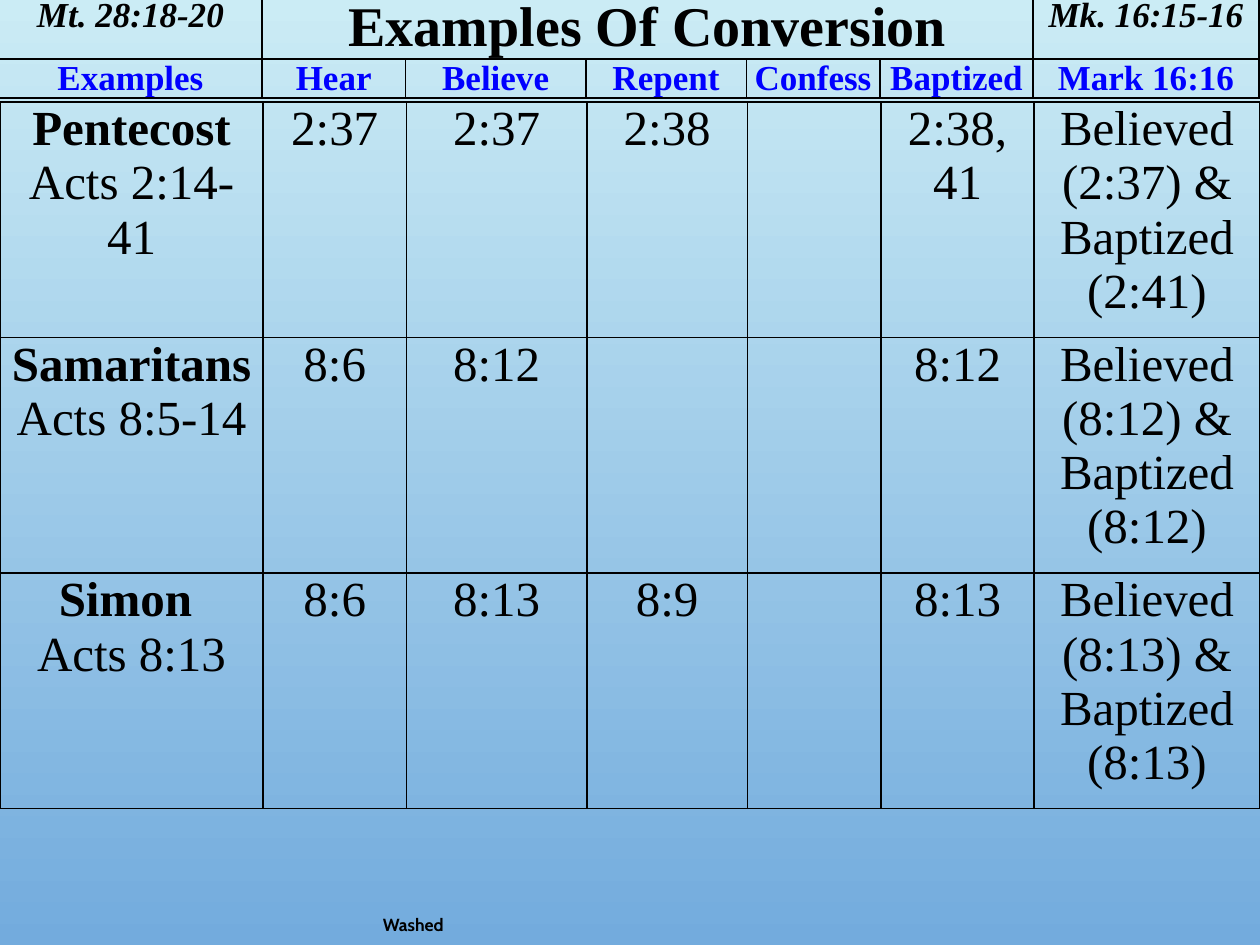
from dataclasses import dataclass

from lxml.etree import SubElement
from pptx import Presentation
from pptx.dml.color import RGBColor
from pptx.enum.text import MSO_ANCHOR, PP_ALIGN
from pptx.oxml.ns import qn
from pptx.util import Pt


@dataclass(frozen=True)
class Theme:
    sky_top: str = "CBECF5"
    sky_bottom: str = "73ABDD"
    ink: str = "000000"
    heading: str = "0000FF"
    serif: str = "Times New Roman"
    sans: str = "Cabin"
    title_size: int = 32
    body_size: int = 28
    label_size: int = 20
    footer_size: int = 10
    border: int = 1


THEME = Theme()
COLUMN_WIDTHS = [150.3, 82, 103.1, 91.7, 76.3, 87.7, 128.9]
HEADINGS = ["Examples", "Hear", "Believe", "Repent", "Confess", "Baptized", "Mark 16:16"]
# Name, passage, then one entry for each heading after the first
CONVERSIONS = [
    ("Pentecost", "Acts 2:14-41", "2:37", "2:37", "2:38", "", "2:38, 41",
     "Believed (2:37) & Baptized (2:41)"),
    ("Samaritans", "Acts 8:5-14", "8:6", "8:12", "", "", "8:12",
     "Believed (8:12) & Baptized (8:12)"),
    ("Simon ", "Acts 8:13", "8:6", "8:13", "8:9", "", "8:13",
     "Believed (8:13) & Baptized (8:13)"),
]
FIRST_TOP, ROW_HEIGHT, ROW_STEP = 58.3, 123.9, 134.6


def write(para, text, size=THEME.body_size, font=THEME.serif, color=THEME.ink,
          bold=False, italic=False, align=PP_ALIGN.CENTER):
    para.alignment = align
    span = para.add_run()
    span.text = text
    span.font.size = Pt(size)
    span.font.name = font
    span.font.bold = bold
    span.font.italic = italic
    span.font.color.rgb = RGBColor.from_string(color)


def format_cell(cell, side_margin=3.6):
    cell.margin_left = cell.margin_right = Pt(side_margin)
    cell.margin_top = cell.margin_bottom = 0
    properties = cell._tc.get_or_add_tcPr()
    for side in ("lnL", "lnR", "lnT", "lnB"):
        line = SubElement(properties, qn(f"a:{side}"), w=str(Pt(THEME.border)))
        fill = SubElement(line, qn("a:solidFill"))
        SubElement(fill, qn("a:srgbClr"), val=THEME.ink)
    cell.fill.background()


def add_grid(page, left, top, row_heights):
    frame = page.shapes.add_table(
        len(row_heights), len(COLUMN_WIDTHS), Pt(left), Pt(top),
        Pt(sum(COLUMN_WIDTHS)), Pt(sum(row_heights)))
    table = frame.table
    table.first_row = table.horz_banding = False
    for column, width in zip(table.columns, COLUMN_WIDTHS):
        column.width = Pt(width)
    for row, height in zip(table.rows, row_heights):
        row.height = Pt(height)
    for cell in table.iter_cells():
        format_cell(cell)
    return table


def add_header(page):
    table = add_grid(page, -0.6, -2.2, [36, 22.3])
    table.cell(0, 1).merge(table.cell(0, 5))
    top_row = [(0, "Mt. 28:18-20", THEME.label_size, True),
               (1, "Examples Of Conversion", THEME.title_size, False),
               (6, "Mk. 16:15-16", THEME.label_size, True)]
    for column, text, size, italic in top_row:
        write(table.cell(0, column).text_frame.paragraphs[0], text,
              size=size, bold=True, italic=italic)
    for column, text in enumerate(HEADINGS):
        write(table.cell(1, column).text_frame.paragraphs[0], text,
              size=THEME.label_size, color=THEME.heading, bold=True)


def add_conversion(page, top, name, passage, *entries):
    table = add_grid(page, 0, top, [ROW_HEIGHT])
    example = table.cell(0, 0).text_frame
    write(example.paragraphs[0], name, bold=True)
    write(example.add_paragraph(), passage)
    for column, text in enumerate(entries, start=1):
        if text:
            write(table.cell(0, column).text_frame.paragraphs[0], text)
    summary = table.cell(0, len(entries))
    summary.margin_left = summary.margin_right = Pt(5)


def add_footer(page):
    box = page.shapes.add_textbox(Pt(211.7), Pt(516.2), Pt(293.8), Pt(23.8))
    box.text_frame.word_wrap = True
    box.text_frame.vertical_anchor = MSO_ANCHOR.MIDDLE
    write(box.text_frame.paragraphs[0], "Washed", size=THEME.footer_size,
          font=THEME.sans, bold=True, align=PP_ALIGN.LEFT)


def paint_background(page):
    fill = page.background.fill
    fill.gradient()
    fill.gradient_angle = 270
    for stop, color in zip(fill.gradient_stops, (THEME.sky_top, THEME.sky_bottom)):
        stop.color.rgb = RGBColor.from_string(color)


def main():
    deck = Presentation()
    deck.slide_width, deck.slide_height = Pt(720), Pt(540)
    page = deck.slides.add_slide(deck.slide_layouts[6])
    paint_background(page)

    # Title and column headings
    add_header(page)
    add_footer(page)

    # One table for each conversion, evenly spaced
    for index, conversion in enumerate(CONVERSIONS):
        add_conversion(page, FIRST_TOP + index * ROW_STEP, *conversion)

    deck.save("out.pptx")


if __name__ == "__main__":
    main()
